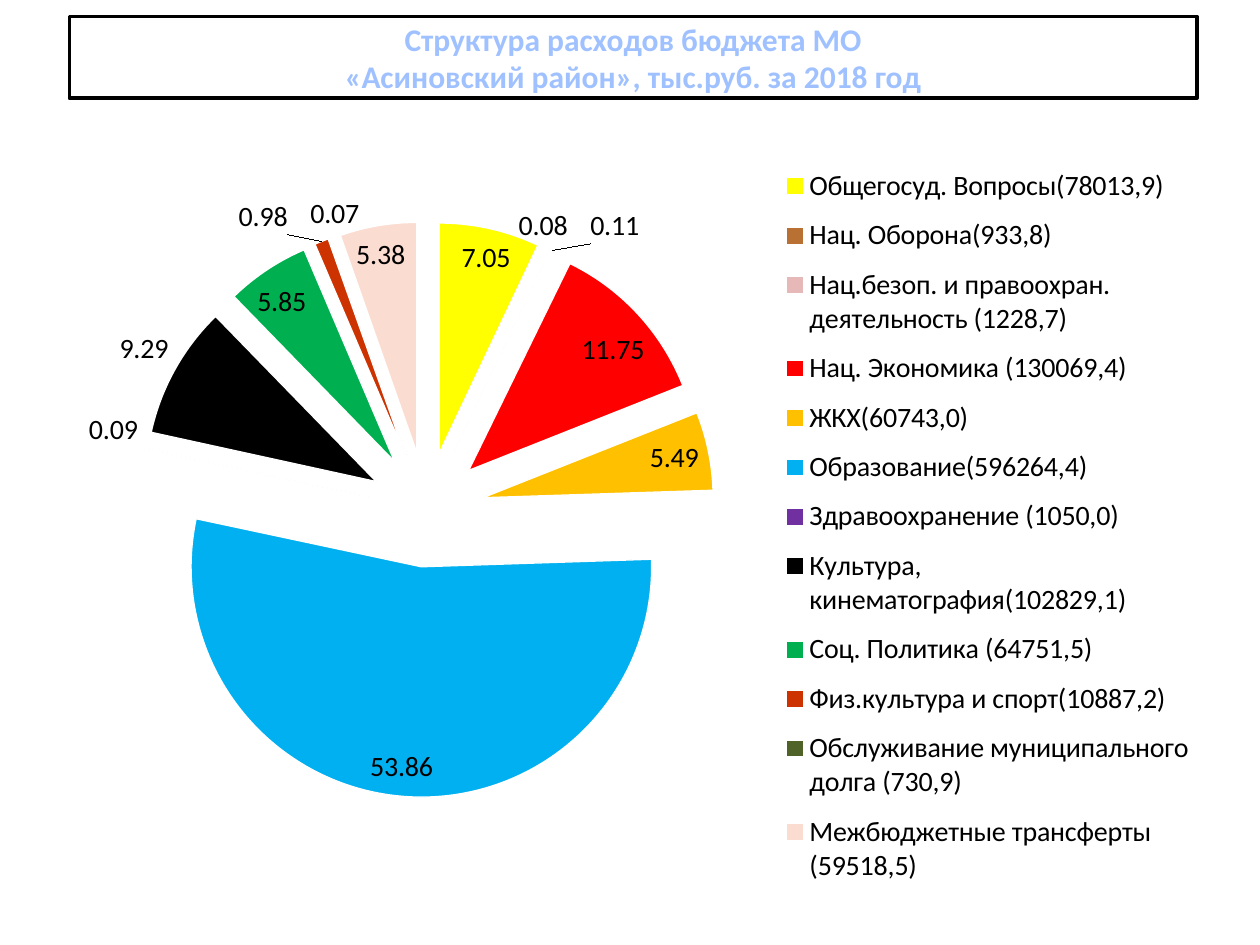
from dataclasses import dataclass

from lxml.etree import SubElement
from pptx import Presentation
from pptx.chart.data import CategoryChartData
from pptx.dml.color import RGBColor
from pptx.enum.chart import XL_CHART_TYPE as ChartType
from pptx.enum.chart import XL_LABEL_POSITION as LabelPosition
from pptx.enum.chart import XL_LEGEND_POSITION as LegendPosition
from pptx.enum.shapes import MSO_SHAPE as Shape
from pptx.enum.text import MSO_ANCHOR as Anchor
from pptx.enum.text import PP_ALIGN as Align
from pptx.oxml.ns import qn
from pptx.util import Inches, Pt


@dataclass(frozen=True)
class Theme:
    font: str = "Calibri"
    title_size: int = 18
    chart_size: int = 16
    title: str = "A0C1FF"
    ink: str = "000000"
    paper: str = "FFFFFF"


THEME = Theme()

TITLE_LINES = ["Структура расходов бюджета МО", "«Асиновский район», тыс.руб. за 2018 год"]

# Category, share in percent, slice colour
EXPENSES = [
    ("Общегосуд. Вопросы(78013,9)", 7.05, "FFFF00"),
    ("Нац. Оборона(933,8)", 0.08, "B87033"),
    ("Нац.безоп. и правоохран. деятельность (1228,7)", 0.11, "E6B9B8"),
    ("Нац. Экономика (130069,4)", 11.75, "FF0000"),
    ("ЖКХ(60743,0)", 5.49, "FFC000"),
    ("Образование(596264,4)", 53.86, "00B0F0"),
    ("Здравоохранение (1050,0)", 0.09, "7030A0"),
    ("Культура, кинематография(102829,1)", 9.29, "000000"),
    ("Соц. Политика (64751,5)", 5.85, "00B050"),
    ("Физ.культура и спорт(10887,2)", 0.98, "CC3300"),
    ("Обслуживание муниципального долга (730,9)", 0.07, "4F6228"),
    ("Межбюджетные трансферты (59518,5)", 5.38, "FBDCD0"),
]


def color(value):
    return RGBColor.from_string(value)


def style_font(font, size, value, bold=False):
    font.name = THEME.font
    font.size = Pt(size)
    font.bold = bold
    font.color.rgb = color(value)


def set_layout(parent, x, y, w, h, inner=False):
    """Fix a chart part at fractions of the chart's box."""
    layout = parent.get_or_add_layout() if hasattr(parent, "get_or_add_layout") else None
    if layout is None:
        layout = parent.find(qn("c:layout"))
    if layout is None:
        layout = SubElement(parent, qn("c:layout"))
        parent.insert(0, layout)
    for child in list(layout):
        layout.remove(child)
    manual = SubElement(layout, qn("c:manualLayout"))
    settings = [("layoutTarget", "inner")] if inner else []
    settings += [("xMode", "edge"), ("yMode", "edge")]
    settings += [("x", x), ("y", y), ("w", w), ("h", h)]
    for tag, value in settings:
        SubElement(manual, qn(f"c:{tag}")).set("val", str(value))


def add_title(page, left, top, width, height):
    box = page.shapes.add_shape(Shape.RECTANGLE, left, top, width, height)
    box.shadow.inherit = False
    box.fill.solid()
    box.fill.fore_color.rgb = color(THEME.paper)
    box.line.color.rgb = color(THEME.ink)
    box.line.width = Pt(2)
    frame = box.text_frame
    frame.word_wrap = True
    frame.vertical_anchor = Anchor.MIDDLE
    for index, line in enumerate(TITLE_LINES):
        para = frame.add_paragraph() if index else frame.paragraphs[0]
        para.text = line
        para.alignment = Align.CENTER
        style_font(para.font, THEME.title_size, THEME.title, bold=True)


def add_expense_pie(page, left, top, width, height):
    data = CategoryChartData(number_format="#,##0.00")
    data.categories = [name for name, _, _ in EXPENSES]
    data.add_series("Series 1", [share for _, share, _ in EXPENSES])
    chart = page.shapes.add_chart(ChartType.PIE, left, top, width, height, data).chart
    style_font(chart.font, THEME.chart_size, THEME.ink)
    chart.has_title = False

    # Legend
    chart.has_legend = True
    chart.legend.position = LegendPosition.RIGHT
    chart.legend.include_in_layout = False
    style_font(chart.legend.font, THEME.chart_size, THEME.ink)

    # Exploded slices
    plot = chart.plots[0]
    plot.vary_by_categories = True
    series = plot.series[0]
    for index, (_, _, fill) in enumerate(EXPENSES):
        slice_format = series.points[index].format
        slice_format.fill.solid()
        slice_format.fill.fore_color.rgb = color(fill)
        slice_format.line.color.rgb = color(THEME.paper)
        slice_format.line.width = Pt(0.75)
    explosion = SubElement(series._element, qn("c:explosion"))
    explosion.set("val", "25")
    series._element.find(qn("c:dPt")).addprevious(explosion)
    for point in series._element.findall(qn("c:dPt")):
        point_explosion = SubElement(point, qn("c:explosion"))
        point_explosion.set("val", "25")
        point.find(qn("c:spPr")).addprevious(point_explosion)

    # Value labels; the black slice carries its label outside
    labels = series.data_labels
    labels.show_value = True
    labels.number_format = "#,##0.00"
    labels.number_format_is_linked = False
    labels.position = LabelPosition.BEST_FIT
    style_font(labels.font, THEME.chart_size, THEME.ink)
    for index, (_, _, fill) in enumerate(EXPENSES):
        if fill == THEME.ink:
            label = series.points[index].data_label
            style_font(label.font, THEME.chart_size, THEME.ink)
            label.position = LabelPosition.OUTSIDE_END

    # Places of the pie and legend within the chart
    plot_area = chart._chartSpace.chart.plotArea
    set_layout(plot_area, 0.06, 0.18, 0.51, 0.68, inner=True)
    legend = chart.legend._element
    set_layout(legend, 0.62, 0.1, 0.38, 0.88)
    legend.find(qn("c:legendPos")).addnext(legend.find(qn("c:layout")))


def main():
    deck = Presentation()
    deck.slide_width, deck.slide_height = Inches(10), Inches(7.5)
    page = deck.slides.add_slide(deck.slide_layouts[6])
    add_expense_pie(page, Inches(0.55), Inches(0.55), Inches(9), Inches(6.72))
    add_title(page, Inches(0.55), Inches(0.13), Inches(8.95), Inches(0.65))
    deck.save("out.pptx")


if __name__ == "__main__":
    main()
